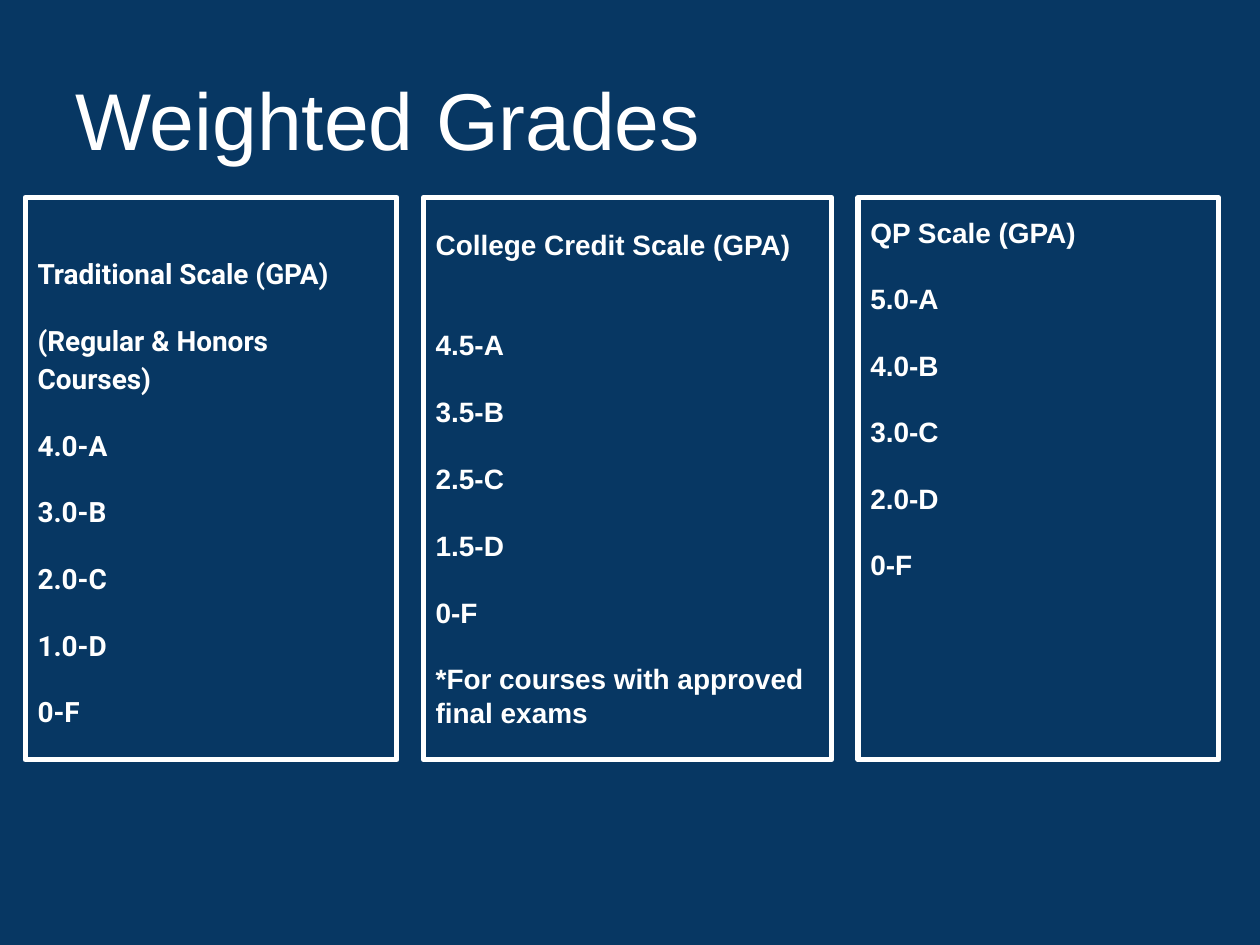
from pptx import Presentation
from pptx.dml.color import RGBColor
from pptx.enum.shapes import MSO_SHAPE as Shape
from pptx.enum.text import MSO_ANCHOR as Anchor, PP_ALIGN as Align
from pptx.util import Inches, Pt

W, H = 10, 7.5
COLORS = {"navy": "073763", "white": "FFFFFF"}
LEFT, GAP, TOP, HEIGHT = 0.02 * W, 0.021 * W, 0.209 * H, 0.595 * H
INSET = 0.1


def color(name):
    """Return a palette colour."""
    return RGBColor.from_string(COLORS[name])


def set_frame(tf, anchor, top=INSET):
    """Set the wrapping, anchor and insets of a text frame."""
    tf.word_wrap = True
    tf.vertical_anchor = anchor
    tf.margin_left = tf.margin_right = tf.margin_bottom = Inches(INSET)
    tf.margin_top = Inches(top)


def add_run(p, text, font, size, bold=False):
    """Add one white run to a left-aligned paragraph."""
    p.alignment = Align.LEFT
    r = p.add_run()
    r.text = text
    r.font.name, r.font.size, r.font.bold = font, Pt(size), bold
    r.font.color.rgb = color("white")


def add_title(s, text):
    """Add the slide title."""
    box = s.shapes.add_textbox(Inches(0.05 * W), Inches(0.042 * H),
                               Inches(0.817 * W), Inches(0.167 * H))
    set_frame(box.text_frame, Anchor.MIDDLE)
    add_run(box.text_frame.paragraphs[0], text, "Arial", 46)


def add_scale(s, x, width, lines, font, top, spacing, before, first_gap):
    """Add one outlined grade scale with evenly spaced lines."""
    sp = s.shapes.add_shape(Shape.RECTANGLE, Inches(x), Inches(TOP),
                            Inches(width), Inches(HEIGHT))
    sp.shadow.inherit = False
    sp.fill.background()
    sp.line.color.rgb, sp.line.width = color("white"), Pt(3)
    tf = sp.text_frame
    set_frame(tf, Anchor.TOP, top)
    for i, text in enumerate(lines):
        p = tf.add_paragraph() if i else tf.paragraphs[0]
        p.line_spacing = spacing
        if i:
            p.space_before = Pt(first_gap if i == 1 else before)
        add_run(p, text, font, 16, True)


def main():
    """Build the weighted grades slide."""
    prs = Presentation()
    prs.slide_width, prs.slide_height = Inches(W), Inches(H)
    s = prs.slides.add_slide(prs.slide_layouts[6])
    s.background.fill.solid()
    s.background.fill.fore_color.rgb = color("navy")
    add_title(s, "Weighted Grades")
    scales = [
        (0.295 * W, ["Traditional Scale (GPA)", "(Regular & Honors Courses)",
                     "4.0-A", "3.0-B", "2.0-C", "1.0-D", "0-F"],
         "Roboto", 0.43, 1.15, 16, 16),
        (0.324 * W, ["College Credit Scale (GPA)", "4.5-A", "3.5-B", "2.5-C",
                     "1.5-D", "0-F", "*For courses with approved final exams"],
         "Arial", 0.24, 1.0, 19, 38),
        (0.286 * W, ["QP Scale (GPA)", "5.0-A", "4.0-B", "3.0-C", "2.0-D", "0-F"],
         "Arial", INSET, 1.15, 16, 16),
    ]
    x = LEFT
    for width, *details in scales:
        add_scale(s, x, width, *details)
        x += width + GAP
    prs.save("out.pptx")


if __name__ == "__main__":
    main()
